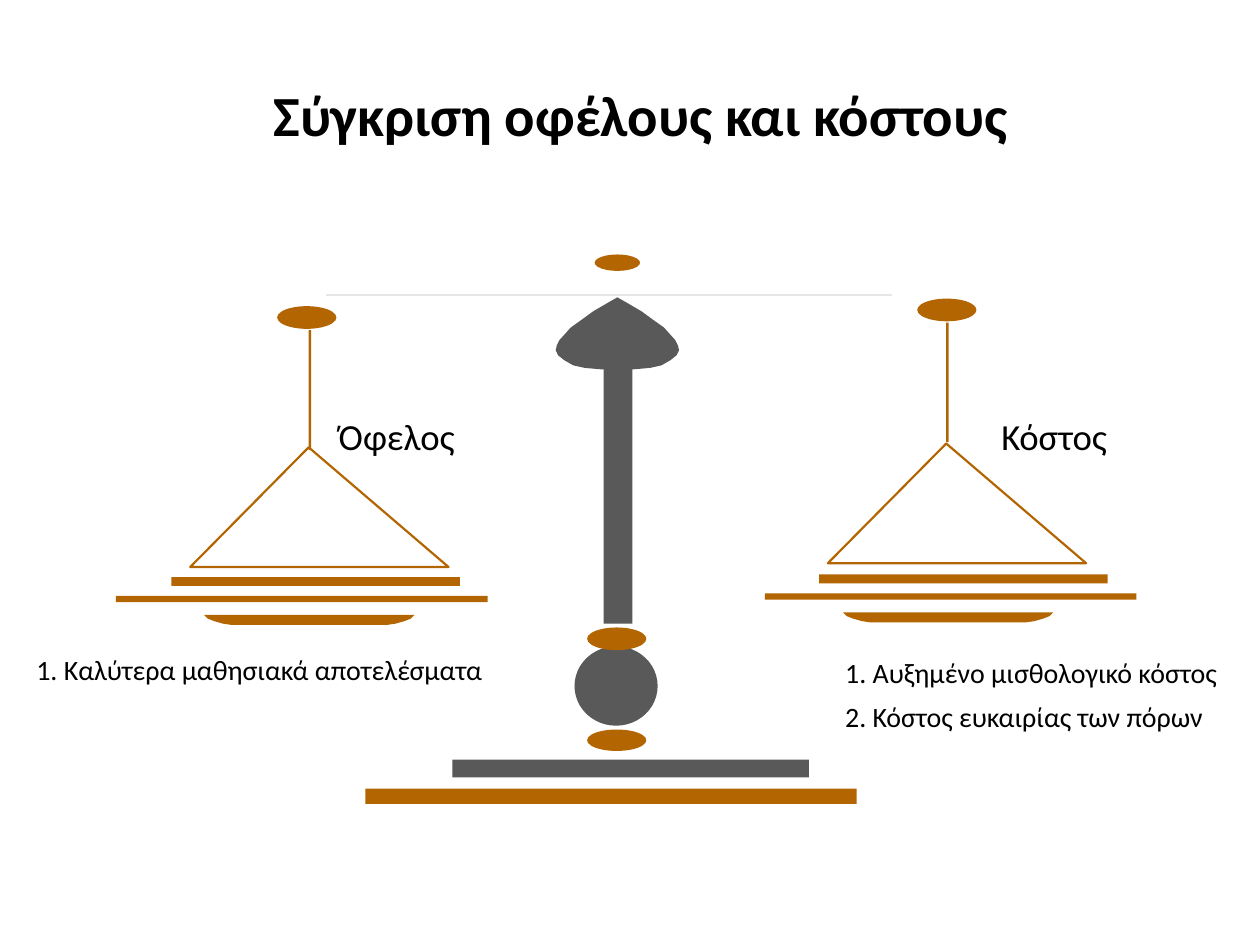
from lxml import etree
from pptx import Presentation
from pptx.dml.color import RGBColor
from pptx.enum.shapes import MSO_CONNECTOR, MSO_SHAPE
from pptx.enum.text import MSO_ANCHOR, MSO_AUTO_SIZE, PP_ALIGN
from pptx.oxml.ns import qn
from pptx.util import Inches, Pt

OVAL, RECT = MSO_SHAPE.OVAL, MSO_SHAPE.RECTANGLE
STRAIGHT = MSO_CONNECTOR.STRAIGHT
MIDDLE, CENTER, LEFT = MSO_ANCHOR.MIDDLE, PP_ALIGN.CENTER, PP_ALIGN.LEFT
GROW, FIXED = MSO_AUTO_SIZE.SHAPE_TO_FIT_TEXT, MSO_AUTO_SIZE.NONE

FONT, BLACK, GREY, BRONZE, PALE = "Calibri", "000000", "595959", "B26500", "E7E6E6"

# Content: text, place (left, top, width, height)
TITLE = ("Σύγκριση οφέλους και κόστους", (0.67, 0.68, 8.83, 0.52))
SIDE_LABELS = [
    ("Όφελος", (2.59, 3.23, 1.3, 0.45)),
    ("Κόστος", (7.85, 3.23, 1.3, 0.45)),
]
NOTES = [  # text, place, wrap
    ("1. Καλύτερα μαθησιακά αποτελέσματα", (0.19, 5.13, 3.79, 0.37), False),
    ("1. Αυξημένο μισθολογικό κόστος", (6.61, 5.15, 3.19, 0.37), False),
    ("2. Κόστος ευκαιρίας των πόρων", (6.61, 5.5, 3.2, 0.37), True),
]

# Scale parts: left and top corners of each pan
PANS = [
    {"disc": (7.28, 2.37), "cord": (7.51, 2.56), "hanger": (6.57, 3.52),
     "plate": (6.5, 4.56), "tray": (6.07, 4.71), "bowl": (6.69, 4.86)},
    {"disc": (2.2, 2.43), "cord": (2.45, 2.62), "hanger": (1.51, 3.55),
     "plate": (1.36, 4.58), "tray": (0.92, 4.73), "bowl": (1.62, 4.88)},
]
PAN_PARTS = {"cord": (RECT, 0.02, 0.95), "tray": (RECT, 2.95, 0.05),
             "plate": (RECT, 2.29, 0.07), "disc": (OVAL, 0.47, 0.18)}
HANGER = [(0.94, 0), (2.05, 0.95), (0, 0.95)]
BOWL_WIDTH = 1.67
BOWL_HALF = [(0, 0), (0.03, 0.03), (0.08, 0.05), (0.15, 0.07), (0.22, 0.08)]

COLUMN = (RECT, (4.79, 2.86, 0.23, 2.09), GREY)
STAND = [
    (OVAL, (4.72, 2.02, 0.36, 0.13), BRONZE),
    (OVAL, (4.56, 5.13, 0.66, 0.63), GREY),
    (OVAL, (4.66, 5.79, 0.47, 0.17), BRONZE),
    (OVAL, (4.66, 4.98, 0.47, 0.18), BRONZE),
    (RECT, (3.59, 6.03, 2.83, 0.14), GREY),
    (RECT, (2.9, 6.26, 3.9, 0.12), BRONZE),
]
CAP_AXIS = 4.9
CAP_HALF = [(4.9, 2.36), (4.83, 2.4), (4.71, 2.47), (4.6, 2.55), (4.53, 2.6),
            (4.44, 2.7), (4.42, 2.74), (4.41, 2.78), (4.43, 2.82), (4.48, 2.86),
            (4.55, 2.9), (4.64, 2.92), (4.75, 2.93), (4.9, 2.94)]
BEAM = (2.59, 2.34, 7.08, 2.34)


def color(hex_value):
    return RGBColor.from_string(hex_value)


def paint(shape, fill):
    shape.shadow.inherit = False
    shape.fill.solid()
    shape.fill.fore_color.rgb = color(fill)
    shape.line.fill.background()


def add_part(slide, kind, place, fill):
    paint(slide.shapes.add_shape(kind, *map(Inches, place)), fill)


def add_outline(slide, points):
    hundredths = [(x * 100, y * 100) for x, y in points]
    builder = slide.shapes.build_freeform(*hundredths[0], scale=Inches(0.01))
    builder.add_line_segments(hundredths[1:], close=True)
    return builder.convert_to_shape()


def mirrored(half, axis):
    return half + [(2 * axis - x, y) for x, y in reversed(half)]


def write(shape, text, size, align=LEFT, bold=False, **frame_format):
    frame = shape.text_frame
    for attribute, value in frame_format.items():
        setattr(frame, attribute, value)
    paragraph = frame.paragraphs[0]
    paragraph.alignment = align
    run = paragraph.add_run()
    run.text = text
    for attribute, value in {"name": FONT, "size": Pt(size), "bold": bold}.items():
        setattr(run.font, attribute, value)
    run.font.color.rgb = color(BLACK)
    return paragraph


def add_pan(slide, pan):
    for part, (kind, width, height) in PAN_PARTS.items():
        add_part(slide, kind, (*pan[part], width, height), BRONZE)

    left, top = pan["hanger"]
    hanger = add_outline(slide, [(left + x, top + y) for x, y in HANGER])
    hanger.shadow.inherit = False
    hanger.fill.background()
    hanger.line.color.rgb = color(BRONZE)
    hanger.line.width = Pt(1.25)

    left, top = pan["bowl"]
    rim = mirrored(BOWL_HALF, BOWL_WIDTH / 2)
    paint(add_outline(slide, [(left + x, top + y) for x, y in rim]), BRONZE)


def main():
    deck = Presentation()
    deck.slide_width, deck.slide_height = Inches(10), Inches(7.5)
    slide = deck.slides.add_slide(deck.slide_layouts[5])

    # Title
    text, place = TITLE
    title = slide.shapes.title
    for attribute, value in zip(("left", "top", "width", "height"), place):
        setattr(title, attribute, Inches(value))
    heading = write(title, text, 32.4, CENTER, True, word_wrap=True,
                    vertical_anchor=MIDDLE, auto_size=FIXED)
    heading.line_spacing = 0.9

    # Side labels
    for text, place in SIDE_LABELS:
        label = slide.shapes.add_textbox(*map(Inches, place))
        write(label, text, 21, word_wrap=True, vertical_anchor=MIDDLE)

    # Balance scale
    add_part(slide, *COLUMN)
    for pan in PANS:
        add_pan(slide, pan)
    paint(add_outline(slide, mirrored(CAP_HALF, CAP_AXIS)), GREY)
    for part in STAND:
        add_part(slide, *part)
    beam = slide.shapes.add_connector(STRAIGHT, *map(Inches, BEAM))
    beam.line.color.rgb = color(PALE)
    beam.line.width = Pt(1)
    etree.SubElement(beam._element.spPr, qn("a:effectLst"))

    # Notes under the pans
    for text, place, wrap in NOTES:
        note = slide.shapes.add_textbox(*map(Inches, place))
        write(note, text, 16, word_wrap=wrap, auto_size=GROW)

    deck.save("out.pptx")


if __name__ == "__main__":
    main()
